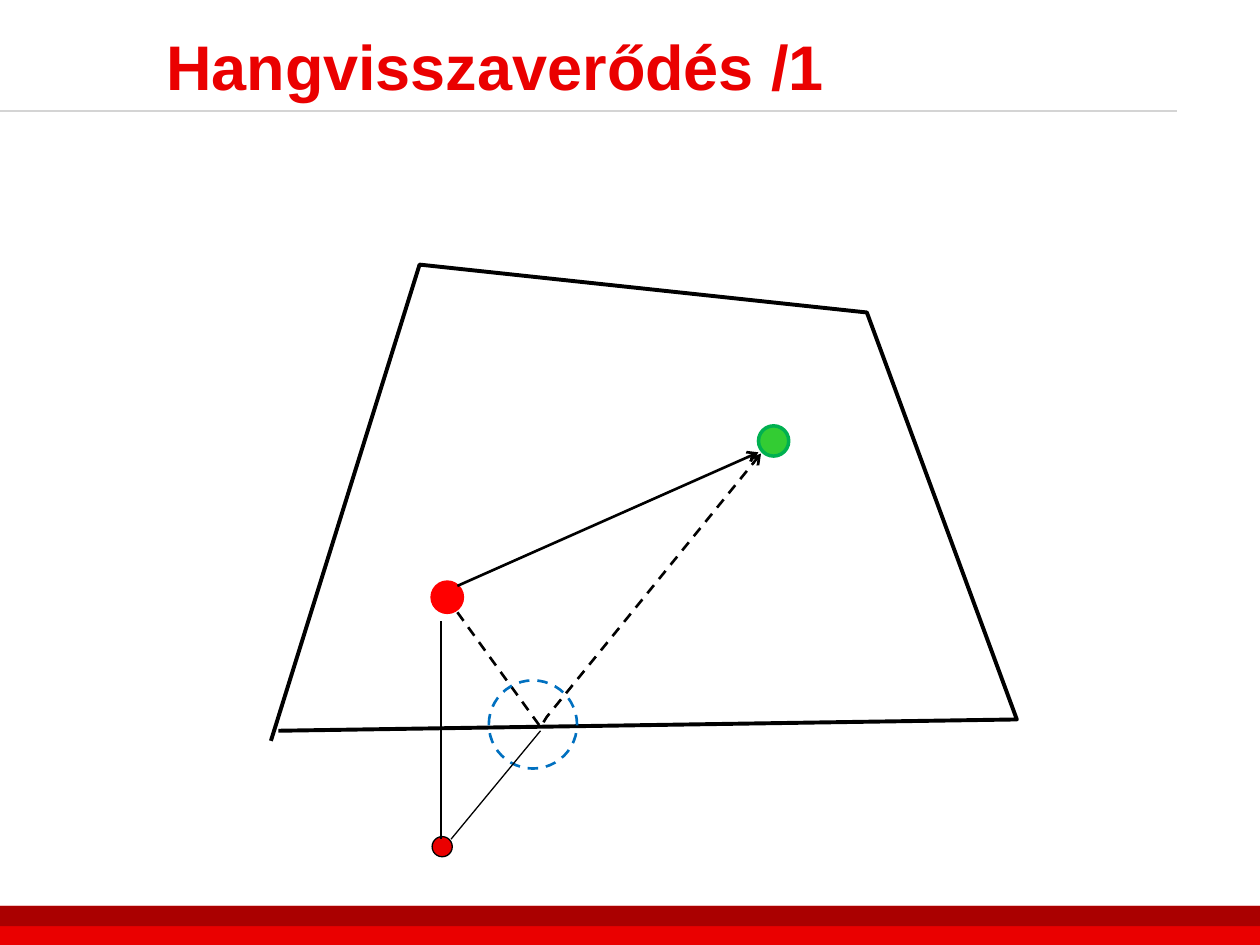
from lxml import etree
from pptx import Presentation
from pptx import util as u
from pptx.dml.color import RGBColor
from pptx.enum import dml, shapes, text
from pptx.oxml.ns import qn

RED = RGBColor(0xEA, 0x00, 0x00)
DARK_RED = RGBColor(0xAA, 0x00, 0x00)
SOURCE_RED = RGBColor(0xFF, 0x00, 0x00)
GRAY = RGBColor(0xD4, 0xD4, 0xD4)
BLACK = RGBColor(0x00, 0x00, 0x00)
GREEN = RGBColor(0x33, 0xCC, 0x33)
DARK_GREEN = RGBColor(0x00, 0xB0, 0x50)
BLUE = RGBColor(0x00, 0x70, 0xC0)


def write_text(frame, content, *, size, color, bold=False, font="Arial"):
    paragraph = frame.paragraphs[0]
    run = paragraph.add_run()
    run.text = content
    run.font.name = font
    run.font.size = u.Pt(size)
    run.font.bold = bold
    run.font.color.rgb = color


class SlideBuilder:
    """Holds the line style and the slide that is being drawn."""

    def __init__(self, slide, line_color=BLACK):
        self.slide = slide
        self.line_color = line_color

    def style_line(self, line, width, color=None, dashed=False, arrow=False):
        line.color.rgb = color or self.line_color
        line.width = u.Pt(width)
        if dashed:
            line.dash_style = dml.MSO_LINE.DASH
        if arrow:
            properties = line.color._xFill.getparent()
            etree.SubElement(properties, qn("a:tailEnd"), type="arrow")

    def shape(self, kind, left, top, width, height, fill=None, line=None):
        shape = self.slide.shapes.add_shape(
            kind, u.Inches(left), u.Inches(top), u.Inches(width), u.Inches(height))
        shape.shadow.inherit = False
        if fill is None:
            shape.fill.background()
        else:
            shape.fill.solid()
            shape.fill.fore_color.rgb = fill
        if line is None:
            shape.line.fill.background()
        else:
            self.style_line(shape.line, **line)

    def band(self, top, height, fill):
        self.shape(shapes.MSO_SHAPE.RECTANGLE, 0, top, 10, height, fill)

    def circle(self, left, top, diameter, fill=None, **line):
        self.shape(shapes.MSO_SHAPE.OVAL, left, top, diameter, diameter, fill, line)

    def line(self, start, end, **line):
        connector = self.slide.shapes.add_connector(
            shapes.MSO_CONNECTOR.STRAIGHT, *map(u.Inches, start + end))
        self.style_line(connector.line, **line)
        etree.SubElement(connector._element.spPr, qn("a:effectLst"))

    def polyline(self, points, **line):
        start, *others = [tuple(map(u.Inches, point)) for point in points]
        builder = self.slide.shapes.build_freeform(*start, scale=1.0)
        builder.add_line_segments(others, close=False)
        shape = builder.convert_to_shape()
        shape.shadow.inherit = False
        shape.fill.background()
        self.style_line(shape.line, **line)

    def title(self, content, left, top, width, height):
        box = self.slide.shapes.add_textbox(
            u.Inches(left), u.Inches(top), u.Inches(width), u.Inches(height))
        box.text_frame.word_wrap = True
        box.text_frame.vertical_anchor = text.MSO_ANCHOR.MIDDLE
        write_text(box.text_frame, content, size=36, color=RED, bold=True)


def main():
    presentation = Presentation()
    presentation.slide_width = u.Inches(10)
    presentation.slide_height = u.Inches(7.5)
    slide = presentation.slides.add_slide(presentation.slide_layouts[6])
    builder = SlideBuilder(slide)

    # Footer bands, heading rule and title
    builder.band(7.19, 0.31, RED)
    builder.band(7.19, 0.16, DARK_RED)
    builder.line((0, 0.88), (9.34, 0.88), width=1.5, color=GRAY)
    builder.title("Hangvisszaverődés /1", 1.22, 0.08, 8.74, 0.87)

    # Room walls
    builder.polyline([(2.15, 5.88), (3.33, 2.1), (6.88, 2.48), (8.07, 5.71),
                      (2.21, 5.8)], width=2.25)

    # Sound source and listener
    builder.circle(3.43, 4.62, 0.24, SOURCE_RED, width=2, color=SOURCE_RED)
    builder.circle(6.02, 3.38, 0.24, GREEN, width=2, color=DARK_GREEN)

    # Reflected and direct sound paths
    builder.polyline([(3.63, 4.86), (4.29, 5.77), (4.34, 5.69), (6.04, 3.6)],
                     width=1.5, dashed=True, arrow=True)
    builder.line((3.63, 4.65), (6.02, 3.59), width=1.5, arrow=True)

    # Reflection point
    builder.circle(3.88, 5.4, 0.7, width=1.5, color=BLUE, dashed=True)

    # Mirror source with its construction lines
    builder.circle(3.43, 6.64, 0.16, RED, width=0.75)
    builder.line((4.29, 5.8), (3.58, 6.66), width=0.75)
    builder.line((3.5, 4.93), (3.5, 6.66), width=0.75)

    presentation.save("out.pptx")


if __name__ == "__main__":
    main()
